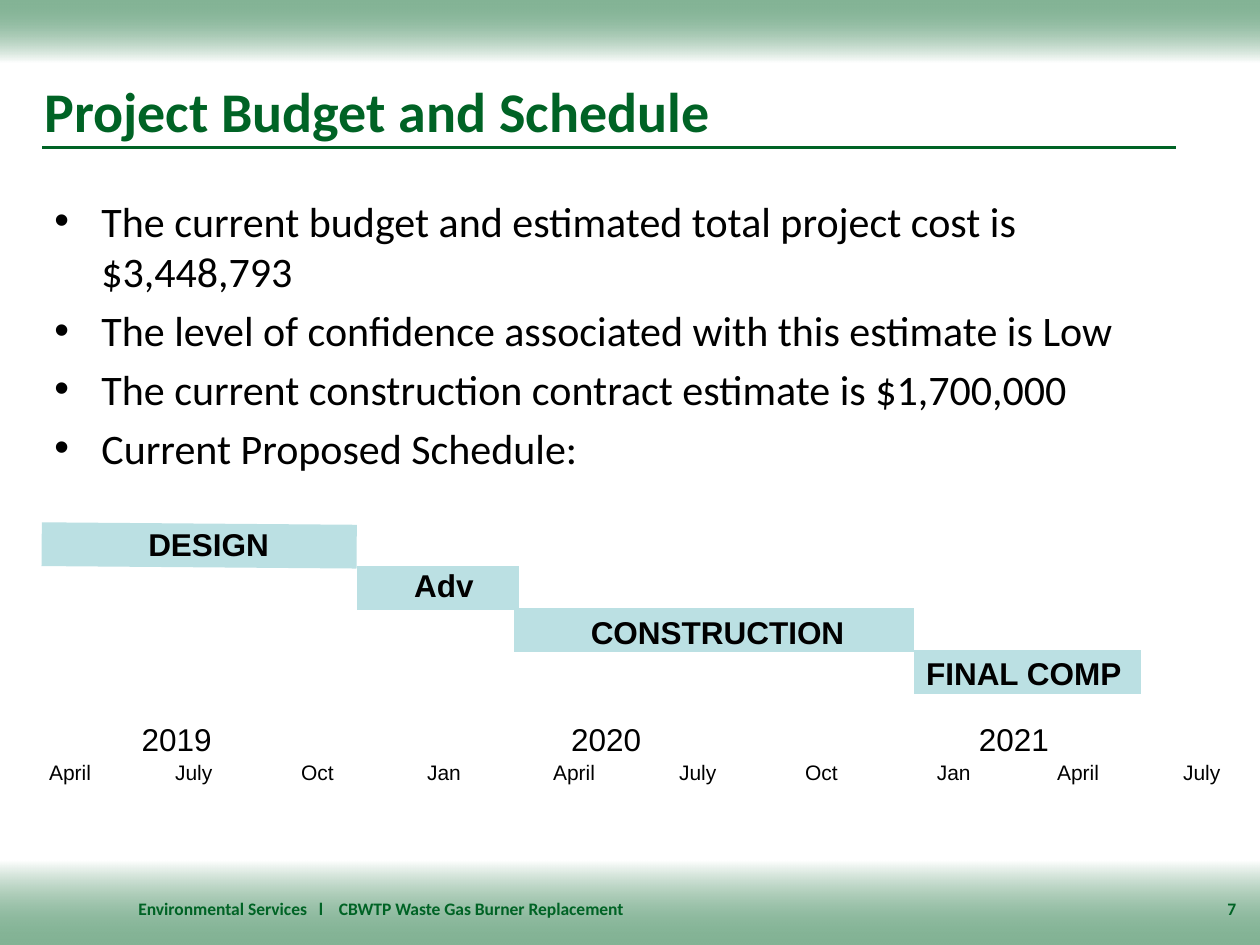
from lxml.etree import SubElement
from pptx import Presentation
from pptx.dml.color import RGBColor
from pptx.enum.shapes import MSO_CONNECTOR, MSO_SHAPE
from pptx.enum.text import MSO_ANCHOR, MSO_AUTO_SIZE, PP_ALIGN
from pptx.oxml.ns import qn
from pptx.util import Cm, Pt

GREEN = RGBColor(0x00, 0x63, 0x25)
WHITE = RGBColor(0xFF, 0xFF, 0xFF)
BLACK = RGBColor(0x00, 0x00, 0x00)
AQUA = RGBColor(0xBB, 0xE0, 0xE3)

WIDE, HIGH = 25.4, 19.05
BULLETS = [
    "The current budget and estimated total project cost is $3,448,793",
    "The level of confidence associated with this estimate is Low",
    "The current construction contract estimate is $1,700,000",
    "Current Proposed Schedule:",
]
BARS = [
    (0, 0.51, 6.35, 0.56),
    (6.35, 1.4, 9.62, 1.4),
    (9.52, 2.24, 14.25, 2.24),
    (12.77, 2.24, 17.58, 2.24),
    (17.58, 3.08, 22.17, 3.08),
]
LABELS = [
    ("DESIGN", 1.9, 0, 3.05),
    ("Adv", 7.26, 0.82, 1.9),
    ("CONSTRUCTION", 10.82, 1.78, 5.74),
    ("FINAL COMP", 17.58, 2.6, 4.78),
]
YEARS = [("2019", 0.33, 4.98), ("2020", 6.35, 10.26), ("2021", 15.57, 8.26)]
MONTHS = ["April", "July", "Oct", "Jan", "April", "July", "Oct", " Jan", "April", "July"]


def style(para, size, color=BLACK, bold=False, face="Arial"):
    for run in para.runs:
        font = run.font
        font.name, font.size, font.bold = face, Pt(size), bold
        font.color.rgb = color


def place(shape, left, top, width, height):
    shape.left, shape.top = Cm(left), Cm(top)
    shape.width, shape.height = Cm(width), Cm(height)


def add_text(slide, text, left, top, width, height=1.02, align=PP_ALIGN.LEFT):
    box = slide.shapes.add_textbox(Cm(left), Cm(top), Cm(width), Cm(height))
    box.text_frame.word_wrap = True
    para = box.text_frame.paragraphs[0]
    para.text = text
    para.alignment = align
    return para


def add_line(slide, ends, color, weight):
    line = slide.shapes.add_connector(MSO_CONNECTOR.STRAIGHT, *map(Cm, ends))
    line.line.color.rgb = color
    line.line.width = Pt(weight)
    SubElement(line._element.spPr, qn("a:effectLst"))


def add_band(slide, top, height, colors):
    band = slide.shapes.add_shape(MSO_SHAPE.RECTANGLE, 0, Cm(top), Cm(WIDE), Cm(height))
    band.shadow.inherit = False
    band.line.fill.background()
    band.fill.gradient()
    band.fill.gradient_angle = 270
    for stop, spot, color in zip(band.fill.gradient_stops, (0, 1), colors):
        stop.position = spot
        stop.color.rgb = color
    for node in band._element.spPr.iter(qn("a:srgbClr")):
        if node.get("val") == str(GREEN):
            SubElement(node, qn("a:alpha"), val="48000")


def add_footer(slide, left, top, width):
    note = "Environmental Services   l    CBWTP Waste Gas Burner Replacement"
    style(add_text(slide, note, left, top, width - 3), 10, GREEN, True, "Calibri")
    page = add_text(slide, "7", left + width - 2.74, top, 2.74, 0.69, PP_ALIGN.RIGHT)
    style(page, 10, GREEN, True, "Calibri")


def fill_title(slide, left, top, width, height):
    title = slide.shapes.title
    place(title, left, top, width, height)
    frame = title.text_frame
    frame.text = "Project Budget and Schedule"
    frame.auto_size = MSO_AUTO_SIZE.NONE
    frame.vertical_anchor = MSO_ANCHOR.MIDDLE
    frame.paragraphs[0].alignment = PP_ALIGN.LEFT
    style(frame.paragraphs[0], 32, GREEN, True, "Calibri")
    rule = top + 1.7
    add_line(slide, (left + 0.21, rule, left + 23.07, rule), GREEN, 2)


def fill_body(slide, left, top, width, height):
    body = slide.placeholders[1]
    place(body, left, top, width, height)
    frame = body.text_frame
    frame.text = "\n".join(BULLETS)
    frame.auto_size = MSO_AUTO_SIZE.NONE
    for rank, para in enumerate(frame.paragraphs):
        props = para._p.get_or_add_pPr()
        props.set("marL", str(Cm(0.95)))
        props.set("indent", str(Cm(-0.95)))
        para.space_before = Pt(4.8 if rank else 0)
        SubElement(props, qn("a:buFont"), typeface="Arial")
        SubElement(props, qn("a:buChar"), char="•")
        style(para, 24, face="Calibri")


def add_bars(slide, left, top):
    for x1, y1, x2, y2 in BARS:
        add_line(slide, (left + x1, top + y1, left + x2, top + y2), AQUA, 25)
    for text, x, y, width in LABELS:
        style(add_text(slide, text, left + x, top + y, width), 18, bold=True)


def add_axis(slide, left, top, width):
    for year, x, span in YEARS:
        style(add_text(slide, year, left + x, top, span, align=PP_ALIGN.CENTER), 18)
    row = add_text(slide, "\t".join(MONTHS), left, top + 0.79, width, 0.76)
    tabs = SubElement(row._p.get_or_add_pPr(), qn("a:tabLst"))
    for step in range(1, len(MONTHS)):
        SubElement(tabs, qn("a:tab"), pos=str(Cm(2.54 * step)), algn="l")
    style(row, 12)


def main():
    deck = Presentation()
    deck.slide_width, deck.slide_height = Cm(WIDE), Cm(HIGH)
    slide = deck.slides.add_slide(deck.slide_layouts[1])
    add_band(slide, HIGH - 1.7, 1.7, (WHITE, GREEN))
    add_band(slide, 0, 1.27, (GREEN, WHITE))
    add_footer(slide, 2.54, 17.98, 22.63)
    fill_title(slide, 0.64, 1.27, 20.52, 1.9)
    fill_body(slide, 0.84, 3.81, 23.7, 6)
    add_bars(slide, 0.84, 10.46)
    add_axis(slide, 0.74, 14.4, 24.34)
    deck.save("out.pptx")


if __name__ == "__main__":
    main()
